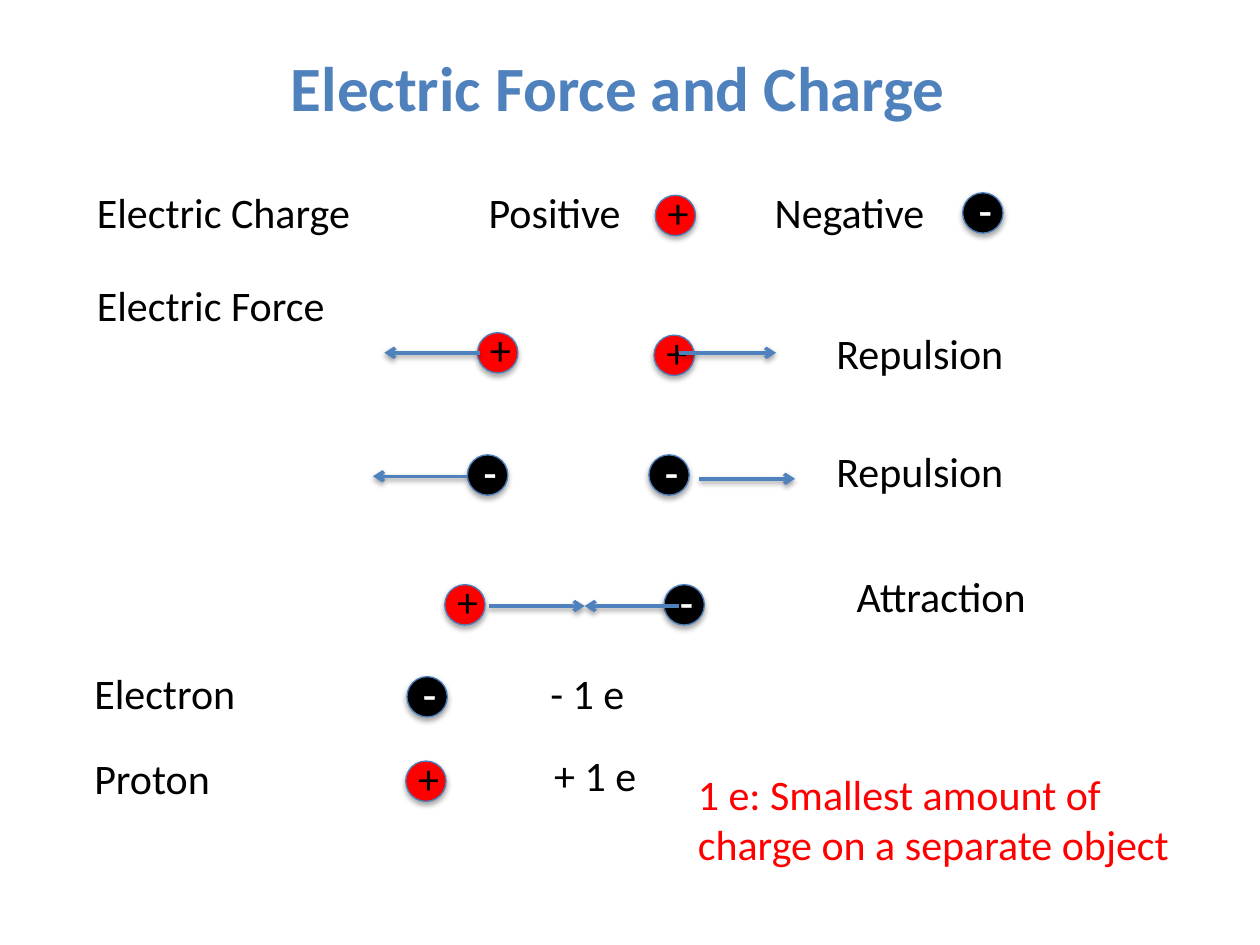
import pptx
import pptx.util
import pptx.dml.color
import pptx.enum.shapes
import pptx.enum.text
import pptx.oxml
import pptx.oxml.ns

HUES = {
    "blue": "4F81BD", "edge": "4B7EBC", "navy": "054697",
    "red": "FF0000", "black": "000000", "white": "FFFFFF",
}
FONT = "Calibri"
COLS, ROWS = 100, 75
NS = pptx.oxml.ns.nsdecls("a")


def rgb(hue):
    return pptx.dml.color.RGBColor.from_string(HUES[hue])


def write(frame, text, size=24, hue="black", bold=False, align=None,
          wrap=True, rim=None):
    """Fill a text frame; rim is the letters' outline as (hue, points)."""
    frame.word_wrap = wrap
    para = frame.paragraphs[0]
    if align is not None:
        para.alignment = align
    run = para.add_run()
    run.text = text
    font = run.font
    font.name, font.size, font.bold = FONT, pptx.util.Pt(size), bold
    font.color.rgb = rgb(hue)
    if rim:
        tone, width = rim
        run._r.get_or_add_rPr().insert(0, pptx.oxml.parse_xml(
            f'<a:ln {NS} w="{pptx.util.Pt(width)}"><a:solidFill>'
            f'<a:srgbClr val="{HUES[tone]}"/></a:solidFill></a:ln>'))


def shade(shape, drop, alpha):
    """Put a soft black shadow straight below a shape."""
    shape._element.spPr.append(pptx.oxml.parse_xml(
        f'<a:effectLst {NS}><a:outerShdw blurRad="{pptx.util.Pt(3.1)}" '
        f'dist="{pptx.util.Pt(drop)}" dir="5400000" rotWithShape="0">'
        f'<a:srgbClr val="{HUES["black"]}"><a:alpha val="{alpha * 1000}"/>'
        f'</a:srgbClr></a:outerShdw></a:effectLst>'))


class Board:
    """Style and current slide, placed on a grid of COLS by ROWS."""

    def __init__(self, deck):
        self.wide = deck.slide_width / COLS
        self.high = deck.slide_height / ROWS
        self.slide = deck.slides.add_slide(deck.slide_layouts[5])

    def place(self, *spots):
        return [round(spot * (self.high if i % 2 else self.wide))
                for i, spot in enumerate(spots)]

    def title(self, text, *box):
        head = self.slide.shapes.title
        head.left, head.top, head.width, head.height = self.place(*box)
        write(head.text_frame, text, size=36, hue="blue", bold=True,
              align=pptx.enum.text.PP_ALIGN.CENTER, wrap=False,
              rim=("navy", 1))

    def label(self, text, col, row, wide=22.4, high=5, home=None, **style):
        home = home or self.slide
        box = home.shapes.add_textbox(*self.place(col, row, wide, high))
        write(box.text_frame, text, **style)

    def charge(self, sign, col, row):
        """Draw a ball with its sign as one group."""
        plus = sign == "+"
        group = self.slide.shapes.add_group_shape()
        ball = group.shapes.add_shape(
            pptx.enum.shapes.MSO_SHAPE.OVAL, *self.place(col, row, 3.2, 3.2))
        ball.fill.solid()
        ball.fill.fore_color.rgb = rgb("red" if plus else "black")
        ball.line.color.rgb = rgb("edge")
        ball.line.width = pptx.util.Pt(0.75)
        shade(ball, 1.8, 35)
        style = {} if plus else {"hue": "white", "rim": ("white", 1.45)}
        self.label(sign, col if plus else col + 0.3, row - 1.2, wide=3.7,
                   home=group, **style)

    def arrow(self, start, end, row):
        line = self.slide.shapes.add_connector(
            pptx.enum.shapes.MSO_CONNECTOR.STRAIGHT,
            *self.place(start, row, end, row))
        line.line.color.rgb = rgb("blue")
        line.line.width = pptx.util.Pt(2)
        line.line._get_or_add_ln().append(
            pptx.oxml.parse_xml(f'<a:tailEnd {NS} type="arrow"/>'))
        shade(line, 1.6, 38)


def main():
    deck = pptx.Presentation()
    deck.slide_width = pptx.util.Inches(10)
    deck.slide_height = pptx.util.Inches(7.5)
    board = Board(deck)
    board.title("Electric Force and Charge", 21.7, 3.3, 54.7, 7.1)

    for text, col, row in [
        ("Electric Charge", 6.7, 14.3), ("Positive", 37.8, 14.3),
        ("Negative", 60.5, 14.3), ("Electric Force", 6.7, 21.7),
        ("Repulsion", 65.4, 25.5), ("Repulsion", 65.4, 34.9),
        ("Attraction", 67, 44.8),
        ("Electron", 6.5, 52.5), ("- 1 e", 42.7, 52.5),
        ("Proton", 6.5, 59.2), ("+ 1 e", 43, 59),
    ]:
        board.label(text, col, row)
    board.label("1 e: Smallest amount of charge on a separate object",
                54.4, 60.5, wide=41, high=9.1, hue="red")

    for sign, col, row in [
        ("+", 52, 15.5), ("-", 76.4, 15.3),
        ("+", 37.9, 26.4), ("+", 51.9, 26.6),
        ("-", 37.1, 36.1), ("-", 51.5, 36.1),
        ("+", 35.3, 46.4), ("-", 52.7, 46.4),
        ("-", 32.3, 53.7), ("+", 32.2, 60.4),
    ]:
        board.charge(sign, col, row)

    for start, end, row in [
        (38.1, 30.5, 28), (53.9, 61.6, 28),
        (37.1, 29.6, 37.8), (55.5, 63.1, 38),
        (38.8, 46.4, 48.1), (53.9, 46.4, 48.1),
    ]:
        board.arrow(start, end, row)
    deck.save("out.pptx")


if __name__ == "__main__":
    main()
